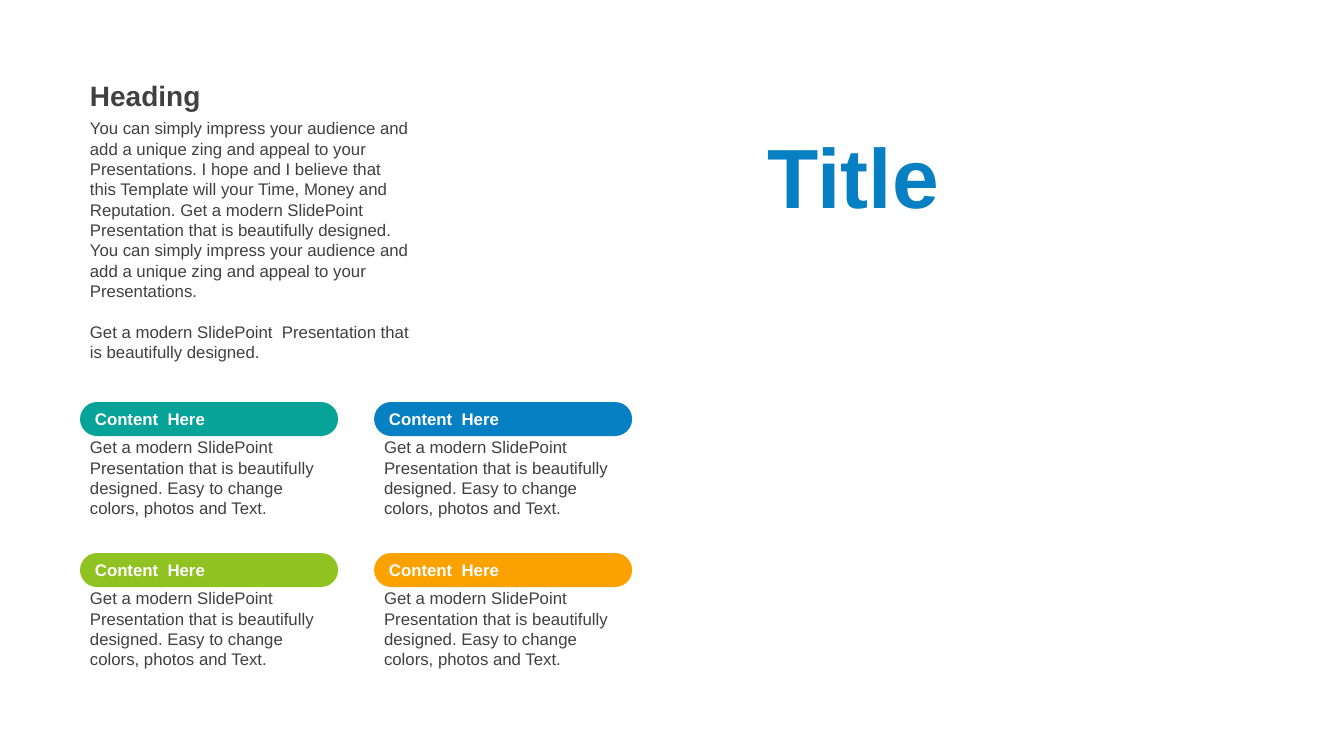
import dataclasses

import pptx
import pptx.dml.color
import pptx.enum.shapes
import pptx.enum.text
import pptx.util

TITLE = "Title"
HEADING = "Heading"
DESCRIPTION = [
    "You can simply impress your audience and add a unique zing and appeal to your Presentations. "
    "I hope and I believe that this Template will your Time, Money and Reputation. "
    "Get a modern SlidePoint  Presentation that is beautifully designed. "
    "You can simply impress your audience and add a unique zing and appeal to your Presentations.",
    "Get a modern SlidePoint  Presentation that is beautifully designed.",
]
CARD_LABEL = "Content  Here"
CARD_TEXT = (
    "Get a modern SlidePoint  Presentation that is beautifully designed. "
    "Easy to change colors, photos and Text."
)


@dataclasses.dataclass(frozen=True)
class Theme:
    font: str = "Arial"
    blue: str = "0680C3"
    text: str = "404040"
    white: str = "FFFFFF"
    cards: tuple = ("07A398", "0680C3", "90C221", "FBA200")
    title_size: int = 60
    heading_size: int = 20
    body_size: int = 12
    body_line: float = 14.5


THEME = Theme()
EMU_PER_PX = pptx.util.Inches(1) / 100.8
COLUMNS = 2
LEFT = 80
CARD_TOP, CARD_WIDTH = 402, 258
COLUMN_PITCH, ROW_PITCH = 294, 151
LABEL_HEIGHT, TEXT_OFFSET, TEXT_HEIGHT = 34, 30, 92
INTRO_WIDTH = 342
ANCHOR = pptx.enum.text.MSO_ANCHOR
ALIGN = pptx.enum.text.PP_ALIGN


def px(*lengths):
    return [round(length * EMU_PER_PX) for length in lengths]


def rgb(value):
    return pptx.dml.color.RGBColor.from_string(value)


def write(shape, *paragraphs, size=THEME.body_size, color=THEME.text, bold=False,
          align=ALIGN.LEFT, anchor=ANCHOR.TOP, line=pptx.util.Pt(THEME.body_line),
          before=0, gap=0):
    frame = shape.text_frame
    frame.word_wrap = True
    frame.auto_size = pptx.enum.text.MSO_AUTO_SIZE.NONE
    frame.vertical_anchor = anchor
    frame.text = "\n".join(paragraphs)
    for index, paragraph in enumerate(frame.paragraphs):
        paragraph.alignment = align
        paragraph.line_spacing = line
        paragraph.space_before = pptx.util.Pt(gap if index else before)
        font = paragraph.runs[0].font
        font.name = THEME.font
        font.size = pptx.util.Pt(size)
        font.bold = bold
        font.color.rgb = rgb(color)


def add_card(shapes, index, color):
    row, column = divmod(index, COLUMNS)
    left = LEFT + column * COLUMN_PITCH
    top = CARD_TOP + row * ROW_PITCH
    label = shapes.add_shape(
        pptx.enum.shapes.MSO_SHAPE.ROUNDED_RECTANGLE,
        *px(left, top, CARD_WIDTH, LABEL_HEIGHT))
    label.adjustments[0] = 0.5
    label.shadow.inherit = False
    label.fill.solid()
    label.fill.fore_color.rgb = rgb(color)
    label.line.fill.background()
    write(label, CARD_LABEL, color=THEME.white, bold=True, anchor=ANCHOR.MIDDLE)
    detail = shapes.add_textbox(*px(left, top + TEXT_OFFSET, CARD_WIDTH, TEXT_HEIGHT))
    write(detail, CARD_TEXT)


def main():
    deck = pptx.Presentation()
    deck.slide_width = pptx.util.Inches(13.33)
    deck.slide_height = pptx.util.Inches(7.5)
    slide = deck.slides.add_slide(deck.slide_layouts.get_by_name("Title Only"))
    shapes = slide.shapes

    title = shapes.title
    title.left, title.top, title.width, title.height = px(478, 124, 471, 92)
    write(title, TITLE, size=THEME.title_size, color=THEME.blue, bold=True,
          align=ALIGN.RIGHT, anchor=ANCHOR.MIDDLE, line=1.1, before=12)

    for index, color in enumerate(THEME.cards):
        add_card(shapes, index, color)

    heading = shapes.add_textbox(*px(LEFT, 74, INTRO_WIDTH, 39))
    write(heading, HEADING, size=THEME.heading_size, bold=True,
          anchor=ANCHOR.MIDDLE, line=1.1, before=4)
    description = shapes.add_textbox(*px(LEFT, 113, INTRO_WIDTH, 254))
    write(description, *DESCRIPTION, gap=THEME.body_line)

    deck.save("out.pptx")


if __name__ == "__main__":
    main()
